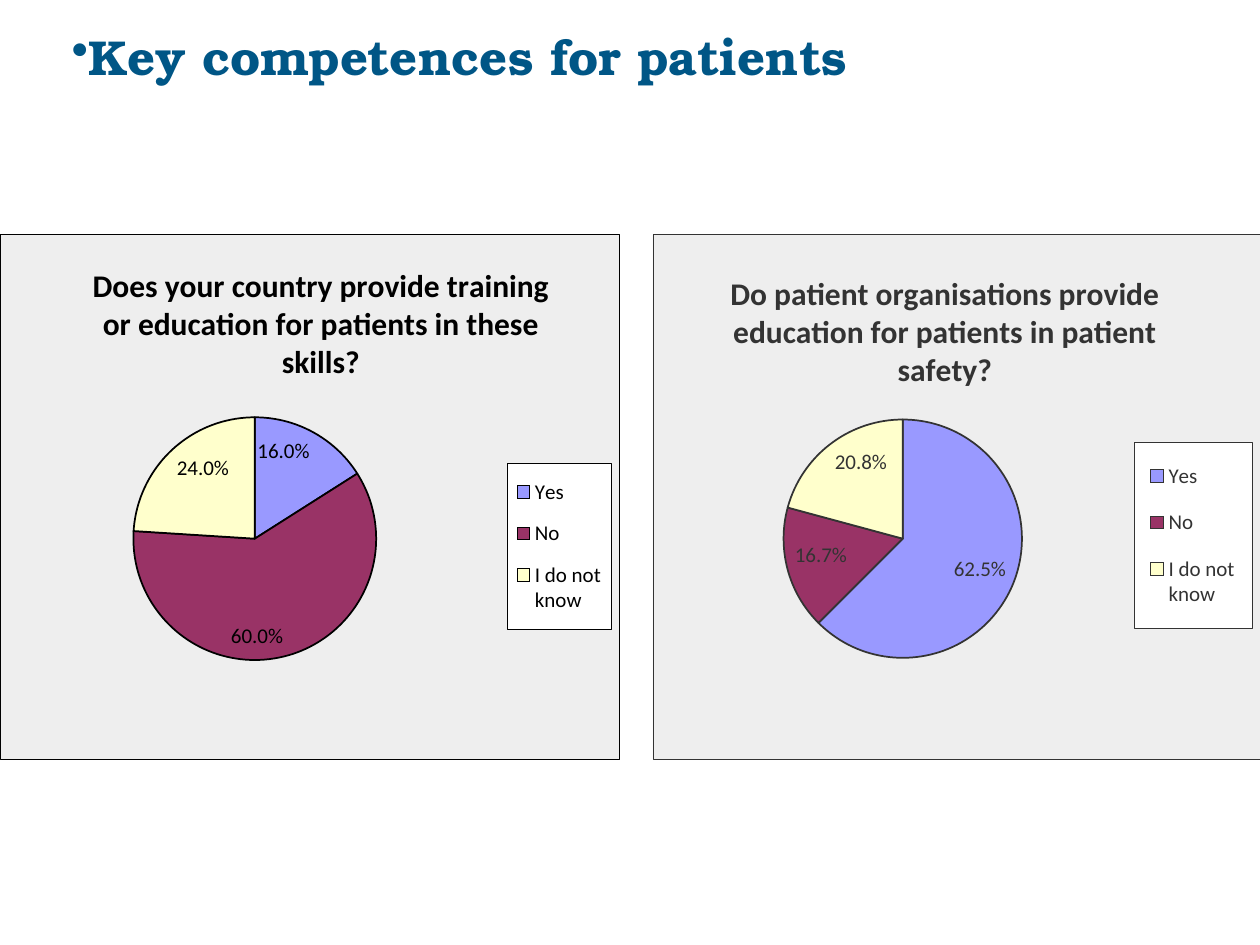
from pptx import Presentation
from pptx.chart.data import CategoryChartData
from pptx.dml.color import RGBColor
from pptx.enum.chart import XL_CHART_TYPE, XL_LABEL_POSITION, XL_LEGEND_POSITION
from pptx.oxml import parse_xml
from pptx.oxml.ns import nsdecls, qn
from pptx.util import Inches, Pt

PIE = XL_CHART_TYPE.PIE
INSIDE_END = XL_LABEL_POSITION.INSIDE_END
LEGEND_RIGHT = XL_LEGEND_POSITION.RIGHT

WIDTH, HEIGHT = Inches(10), Inches(7.5)
COLORS = {
    "heading": "005686", "panel": "EEEEEE", "white": "FFFFFF",
    "black": "000000", "gray": "333333",
    "Yes": "9999FF", "No": "993366", "I do not know": "FFFFCC",
}
ANSWERS = ["Yes", "No", "I do not know"]
PLOT_BOX = (0.215, 0.247, 0.392, 0.665)

# Left and width are shares of the slide; title and legend are shares of the chart.
CHARTS = [
    dict(left=0, width=0.492, ink="black", values=(0.16, 0.6, 0.24),
         question="Does your country provide training or education "
                  "for patients in these skills?",
         title_at=(0.14, 0.045), legend_box=(0.818, 0.435, 0.169, 0.317)),
    dict(left=0.518, width=0.483, ink="gray", values=(0.625, 0.167, 0.208),
         question="Do patient organisations provide education "
                  "for patients in patient safety?",
         title_at=(0.118, 0.06), legend_box=(0.791, 0.395, 0.194, 0.355)),
]


def rgb(name):
    return RGBColor.from_string(COLORS[name])


def style_font(font, size, color, name, bold=False):
    font.size, font.name, font.bold = Pt(size), name, bold
    font.color.rgb = rgb(color)


def area_format(fill, line=None):
    """Return a c:spPr element with a solid fill and an optional thin border."""
    stroke = "<a:noFill/>"
    if line:
        stroke = f'<a:solidFill><a:srgbClr val="{COLORS[line]}"/></a:solidFill>'
    return parse_xml(
        f'<c:spPr {nsdecls("c", "a")}><a:solidFill><a:srgbClr val="{COLORS[fill]}"/>'
        f'</a:solidFill><a:ln w="{Pt(0.25)}">{stroke}</a:ln></c:spPr>')


def place(element, index, box, inner=False):
    """Give a chart part a manual layout, as its child number index."""
    for old in element.findall(qn("c:layout")):
        element.remove(old)
    target = '<c:layoutTarget val="inner"/>' if inner else ""
    modes = '<c:xMode val="edge"/><c:yMode val="edge"/>'
    sizes = "".join(f'<c:{tag} val="{v}"/>' for tag, v in zip("xywh", box))
    element.insert(index, parse_xml(
        f'<c:layout {nsdecls("c")}><c:manualLayout>{target}{modes}{sizes}'
        f'</c:manualLayout></c:layout>'))


def add_heading(slide, text):
    box = slide.shapes.add_textbox(
        int(WIDTH * 0.047), int(HEIGHT * 0.021), int(WIDTH * 0.789), int(HEIGHT * 0.084))
    tf = box.text_frame
    tf.word_wrap = True
    p = tf.paragraphs[0]
    pPr = p._p.get_or_add_pPr()
    pPr.set("marL", "0")
    pPr.set("indent", "0")
    pPr.append(parse_xml(f'<a:buChar {nsdecls("a")} char="•"/>'))
    r = p.add_run()
    r.text = text
    style_font(r.font, 28, "heading", "TeX Gyre Bonum", True)


def style_slices(plot, ink):
    plot.vary_by_categories = True
    for i, answer in enumerate(ANSWERS):
        fmt = plot.series[0].points[i].format
        fmt.fill.solid()
        fmt.fill.fore_color.rgb = rgb(answer)
        fmt.line.color.rgb = rgb(ink)
        fmt.line.width = Pt(1)
    plot.has_data_labels = True
    labels = plot.data_labels
    labels.show_value, labels.show_percentage = True, False
    labels.number_format, labels.number_format_is_linked = "0.0%", False
    labels.position = INSIDE_END
    style_font(labels.font, 12, ink, "Calibri")


def add_pie(slide, left, width, ink, values, question, title_at, legend_box):
    data = CategoryChartData(number_format="0.0%")
    data.categories = ANSWERS
    data.add_series("Series 1", values)
    chart = slide.shapes.add_chart(
        PIE, int(WIDTH * left), int(HEIGHT * 0.248),
        int(WIDTH * width), int(HEIGHT * 0.556), data).chart
    style_font(chart.font, 12, ink, "Calibri")
    style_slices(chart.plots[0], ink)

    chart.has_title = True
    r = chart.chart_title.text_frame.paragraphs[0].add_run()
    r.text = question
    style_font(r.font, 18, ink, "Calibri", True)
    chart.has_legend = True
    chart.legend.position = LEGEND_RIGHT
    chart.legend.include_in_layout = False

    root = chart.element.find(qn("c:chart"))
    title, plot_area, legend = (
        root.find(qn(tag)) for tag in ("c:title", "c:plotArea", "c:legend"))
    place(title, 1, title_at)
    place(plot_area, 0, PLOT_BOX, inner=True)
    place(legend, 1, legend_box)
    root.addnext(area_format("panel", ink))
    plot_area.append(area_format("panel"))
    legend.append(area_format("white", ink))


def main():
    prs = Presentation()
    prs.slide_width, prs.slide_height = WIDTH, HEIGHT
    s = prs.slides.add_slide(prs.slide_layouts[6])
    add_heading(s, "Key competences for patients")
    for chart in CHARTS:
        add_pie(s, **chart)
    prs.save("out.pptx")


if __name__ == "__main__":
    main()
